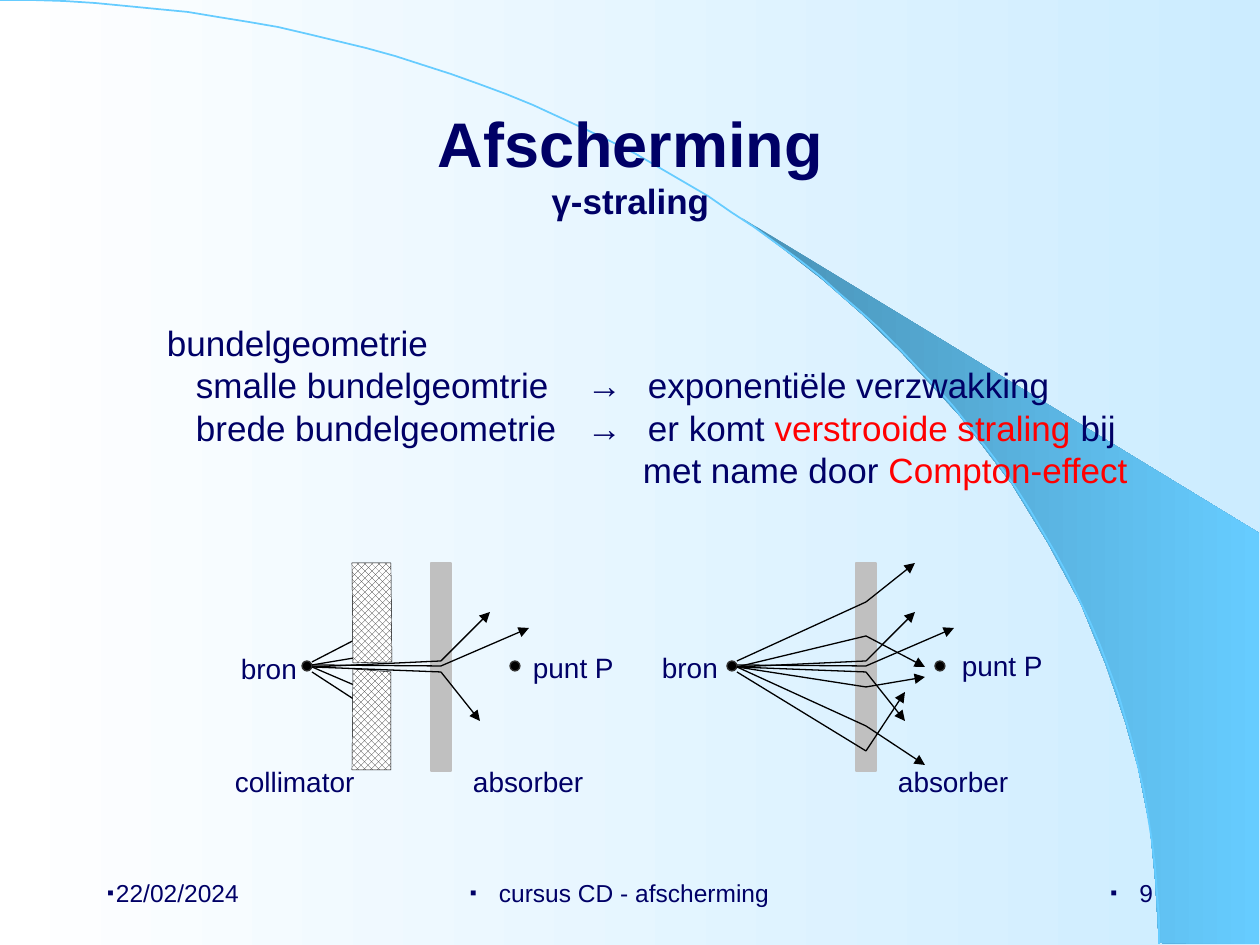
import pptx
import pptx.util
import pptx.dml.color
import pptx.enum.dml
import pptx.enum.shapes
import pptx.enum.text
import pptx.oxml.ns
from lxml import etree

PX = 914400 // 126
NAVY, RED, BLACK, GREY = "000066", "FF0000", "000000", "C0C0C0"
rgb = pptx.dml.color.RGBColor.from_string
qn = pptx.oxml.ns.qn
Pt = pptx.util.Pt
ALIGN = pptx.enum.text.PP_ALIGN
SHAPE = pptx.enum.shapes.MSO_SHAPE

prs = pptx.Presentation()
prs.slide_width, prs.slide_height = 1260 * PX, 945 * PX
s = prs.slides.add_slide(prs.slide_layouts[6])


def add_text(x, y, w, h, runs, align=ALIGN.LEFT):
    sp = s.shapes.add_textbox(x * PX, y * PX, w * PX, h * PX)
    tf = sp.text_frame
    tf.word_wrap = True
    tf.vertical_anchor = pptx.enum.text.MSO_ANCHOR.MIDDLE
    tf.margin_left = tf.margin_right = tf.margin_top = tf.margin_bottom = 0
    p = tf.paragraphs[0]
    p.alignment = align
    for i, (text, size, color, bold) in enumerate(runs):
        if i and size != runs[i - 1][1]:
            p.add_line_break()
        r = p.add_run()
        r.text = text
        r.font.name = "Arial"
        r.font.size = Pt(size)
        r.font.bold = bold
        r.font.color.rgb = rgb(color)
    return p


def add_line(start, end, arrow=False):
    c = s.shapes.add_connector(pptx.enum.shapes.MSO_CONNECTOR.STRAIGHT,
                               start[0] * PX, start[1] * PX, end[0] * PX, end[1] * PX)
    c.line.color.rgb = rgb(BLACK)
    c.line.width = Pt(0.75)
    sp_pr = c.element.spPr
    if arrow:
        etree.SubElement(sp_pr.find(qn("a:ln")), qn("a:tailEnd"), type="triangle")
    etree.SubElement(sp_pr, qn("a:effectLst"))


wedge = [(1159, 943), (1259, 944), (1259, 533), (742, 218), (786, 251), (823, 280),
         (863, 315), (902, 353), (960, 416), (1012, 484), (1048, 543), (1081, 604),
         (1106, 665), (1125, 721), (1138, 767), (1150, 827), (1155, 877)]
fb = s.shapes.build_freeform(*wedge[0], scale=PX)
fb.add_line_segments(wedge[1:], close=True)
sp = fb.convert_to_shape()
sp.shadow.inherit = False
sp.line.fill.background()

for fill, colors in ((s.background.fill, ("FFFFFF", "CCECFF")),
                     (sp.fill, ("4992B6", "66CCFF"))):
    fill.gradient()
    fill.gradient_angle = 0
    for stop, color in zip(fill.gradient_stops, colors):
        stop.color.rgb = rgb(color)

arc = []
for i in range(1, 61):
    t = i / 60
    u = 1 - t
    arc.append((round(3 * u * u * t * 640 + 3 * u * t * t * 1159 + t ** 3 * 1159),
                round(3 * u * t * t * 422 + t ** 3 * 944)))
fb = s.shapes.build_freeform(0, 0, scale=PX)
fb.add_line_segments(arc, close=False)
sp = fb.convert_to_shape()
sp.shadow.inherit = False
sp.fill.background()
sp.line.color.rgb = rgb("66CCFF")
sp.line.width = Pt(1)

add_text(95, 84, 1071, 158, [("Afscherming", 36, NAVY, True), ("γ-straling", 20, NAVY, True)],
         ALIGN.CENTER)

body = [
    ([("bundelgeometrie", NAVY)], []),
    ([("\tsmalle bundelgeomtrie\t→\texponentiële verzwakking", NAVY)], [29, 420, 481]),
    ([("\tbrede bundelgeometrie\t→\ter komt ", NAVY), ("verstrooide straling", RED),
      (" bij", NAVY)], [29, 420, 481]),
    ([("\tmet name door ", NAVY), ("Compton-effect", RED)], [476]),
]
sp = s.shapes.add_textbox(167 * PX, 322 * PX, 1049 * PX, 168 * PX)
tf = sp.text_frame
tf.word_wrap = True
tf.margin_left = tf.margin_right = tf.margin_top = tf.margin_bottom = 0
for i, (runs, stops) in enumerate(body):
    p = tf.add_paragraph() if i else tf.paragraphs[0]
    p.line_spacing = Pt(24)
    for text, color in runs:
        r = p.add_run()
        r.text = text
        r.font.name = "Arial"
        r.font.size = Pt(20)
        r.font.color.rgb = rgb(color)
    if stops:
        tabs = etree.SubElement(p._p.get_or_add_pPr(), qn("a:tabLst"))
        for stop in stops:
            etree.SubElement(tabs, qn("a:tab"), pos=str(stop * PX), algn="l")

for start, end in (((312, 667), (382, 697)), ((312, 672), (372, 711)),
                   ((312, 665), (372, 655)), ((312, 662), (372, 631))):
    add_line(start, end)

for points in ([(353, 663), (392, 662), (391, 563), (352, 563)],
               [(353, 669), (391, 672), (391, 770), (352, 770)]):
    fb = s.shapes.build_freeform(*points[0], scale=PX)
    fb.add_line_segments(points[1:], close=True)
    sp = fb.convert_to_shape()
    sp.shadow.inherit = False
    sp.fill.patterned()
    sp.fill.pattern = pptx.enum.dml.MSO_PATTERN.from_xml("openDmnd")
    sp.fill.fore_color.rgb = rgb("333333")
    sp.fill.back_color.rgb = rgb("FFFFFF")
    sp.line.color.rgb = rgb(BLACK)
    sp.line.width = Pt(0.25)

narrow = [(665, 666, 529, 628), (667, 661, 490, 612), (667, 672, 480, 721)]
wide = narrow + [(667, 636, 500, 667), (661, 602, 490, 563), (667, 687, 500, 677),
                 (672, 751, 480, 692), (667, 726, 500, 765)]
for dx, rays in ((0, narrow), (425, wide)):
    for kind, x, y, w, h, fill, line in (
            (SHAPE.RECTANGLE, 431, 563, 20, 208, GREY, GREY),
            (SHAPE.OVAL, 302, 661, 10, 10, BLACK, "333333"),
            (SHAPE.OVAL, 510, 661, 10, 10, BLACK, "333333")):
        sp = s.shapes.add_shape(kind, (x + dx) * PX, y * PX, w * PX, h * PX)
        sp.shadow.inherit = False
        sp.fill.solid()
        sp.fill.fore_color.rgb = rgb(fill)
        sp.line.color.rgb = rgb(line)
        sp.line.width = Pt(0.75)
    for y0, y1, x2, y2 in rays:
        bend = (441 + dx, y1)
        add_line((312 + dx, y0), bend)
        add_line(bend, (x2 + dx, y2), arrow=True)

for text, x, y, w in (("bron", 241, 651, 65), ("punt P", 533, 650, 90),
                      ("collimator", 235, 764, 130), ("absorber", 473, 764, 120),
                      ("bron", 662, 650, 65), ("punt P", 962, 648, 90),
                      ("absorber", 898, 764, 120)):
    add_text(x, y, w, 34, [(text, 16, NAVY, False)])

for text, x, w, hang, align in (("22/02/2024", 107, 236, 9, ALIGN.LEFT),
                                ("cursus CD - afscherming", 420, 399, 29, ALIGN.CENTER),
                                ("9", 916, 237, 29, ALIGN.RIGHT)):
    p = add_text(x, 861, w, 63, [(text, 14, NAVY, False)], align)
    ppr = p._p.get_or_add_pPr()
    ppr.set("marL", str(hang * PX))
    ppr.set("indent", str(-hang * PX))
    etree.SubElement(ppr, qn("a:buSzPct"), val="80000")
    etree.SubElement(ppr, qn("a:buFont"), typeface="Arial")
    etree.SubElement(ppr, qn("a:buChar"), char="▪")

prs.save("out.pptx")
